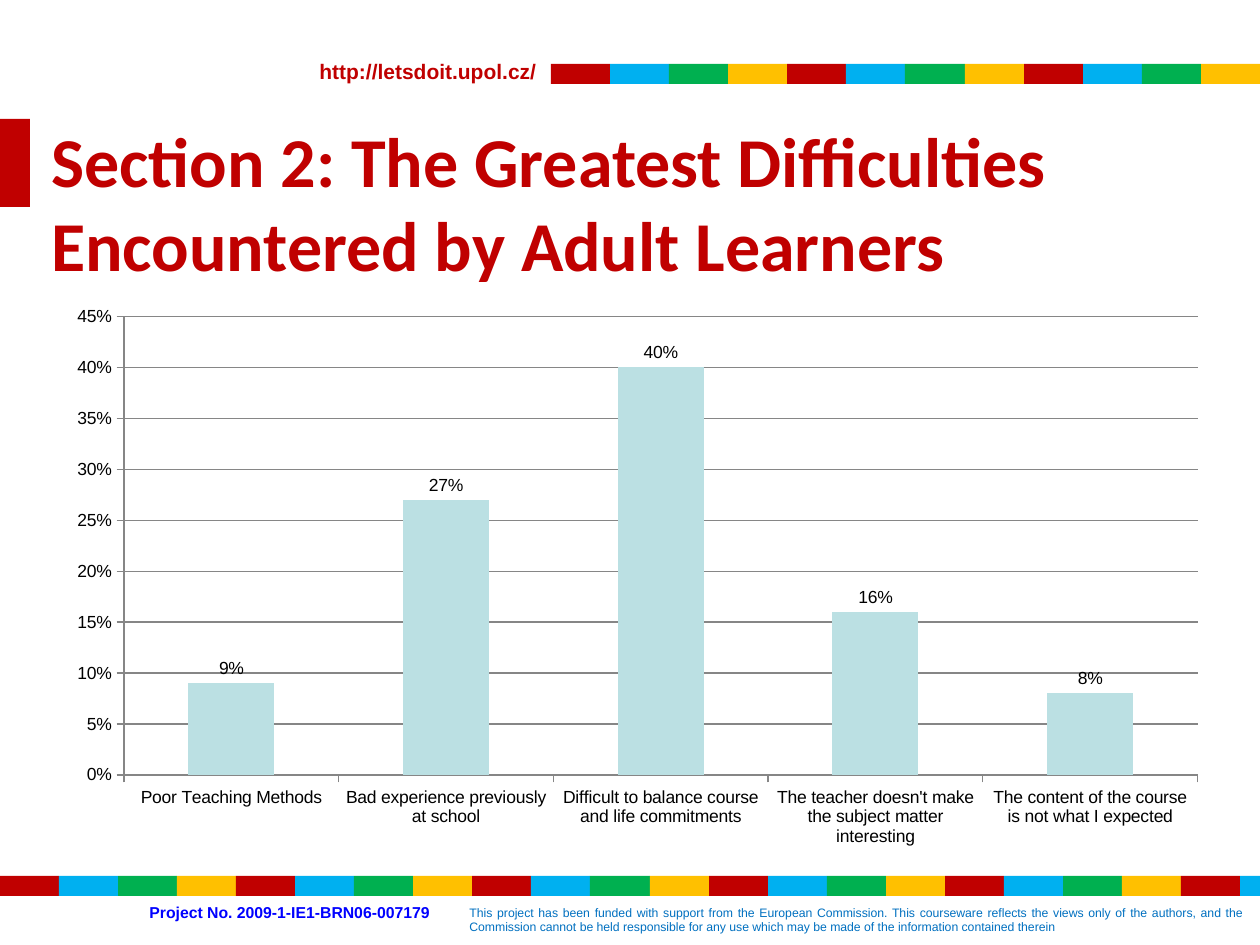
import pptx
import pptx.chart.data
import pptx.dml.color
import pptx.enum.chart
import pptx.enum.shapes
import pptx.enum.text
import pptx.util
from lxml import etree

EMU_PER_PX = 914400 / 126
COLORS = {
    "red": "C00000", "sky": "00B0F0", "green": "00B050", "amber": "FFC000",
    "blue": "0000FF", "note": "0070C0", "bar": "BBE0E3",
    "grid": "868686", "black": "000000",
}
STRIPE = ("red", "sky", "green", "amber")
DIFFICULTIES = {
    "Poor Teaching Methods": 0.09,
    "Bad experience previously at school": 0.27,
    "Difficult to balance course and life commitments": 0.4,
    "The teacher doesn't make the subject matter interesting": 0.16,
    "The content of the course is not what I expected": 0.08,
}
PLOT_AREA = {"x": 0.06, "y": 0.04, "w": 0.92, "h": 0.81}


def px(length):
    return pptx.util.Emu(round(length * EMU_PER_PX))


def rgb(name):
    return pptx.dml.color.RGBColor.from_string(COLORS[name])


def style_font(font, name, size, color, bold=False):
    font.name = name
    font.size = pptx.util.Pt(size)
    font.color.rgb = rgb(color)
    font.bold = bold


def add_text(page, text, bounds, font, size, color, bold=True, wrap=True, top_inset=6, align=None):
    box = page.shapes.add_textbox(*map(px, bounds))
    frame = box.text_frame
    frame.word_wrap = wrap
    frame.margin_top = px(top_inset)
    frame.text = text
    para = frame.paragraphs[0]
    para.alignment = align
    style_font(para.runs[0].font, font, size, color, bold)


def add_block(page, left, top, width, height, color):
    block = page.shapes.add_shape(
        pptx.enum.shapes.MSO_SHAPE.RECTANGLE, px(left), px(top), px(width), px(height))
    block.shadow.inherit = False
    block.fill.solid()
    block.fill.fore_color.rgb = rgb(color)
    block.line.fill.background()


def add_stripe(page, left, top, width, count):
    edges = [left + round(i * width / count) for i in range(count + 1)]
    for i in range(count):
        add_block(page, edges[i], top, edges[i + 1] - edges[i], 20, STRIPE[i % len(STRIPE)])


def place_plot_area(chart):
    plot_area = chart.plots[0]._element.getparent()
    namespace = plot_area.nsmap["c"]
    for old in plot_area.findall(f"{{{namespace}}}layout"):
        plot_area.remove(old)
    layout = etree.Element(f"{{{namespace}}}layout")
    manual = etree.SubElement(layout, f"{{{namespace}}}manualLayout")
    settings = {"layoutTarget": "inner", "xMode": "edge", "yMode": "edge", **PLOT_AREA}
    for tag, value in settings.items():
        etree.SubElement(manual, f"{{{namespace}}}{tag}", val=str(value))
    plot_area.insert(0, layout)


def add_difficulty_chart(page):
    data = pptx.chart.data.CategoryChartData(number_format="0%")
    data.categories = list(DIFFICULTIES)
    data.add_series("Series 1", list(DIFFICULTIES.values()))
    chart = page.shapes.add_chart(
        pptx.enum.chart.XL_CHART_TYPE.COLUMN_CLUSTERED,
        px(54), px(294), px(1167), px(566), data).chart
    chart.has_legend = False
    chart.has_title = False
    style_font(chart.font, "Arial", 10, "black")
    place_plot_area(chart)

    # Axes and gridlines
    values = chart.value_axis
    values.minimum_scale, values.maximum_scale, values.major_unit = 0, 0.45, 0.05
    values.has_major_gridlines = True
    values.tick_labels.number_format = "0%"
    values.tick_labels.number_format_is_linked = False
    for axis in (values, chart.category_axis):
        axis.major_tick_mark = pptx.enum.chart.XL_TICK_MARK.OUTSIDE
    for line in (values.format.line, chart.category_axis.format.line,
                 values.major_gridlines.format.line):
        line.color.rgb = rgb("grid")
        line.width = pptx.util.Pt(0.75)

    # Bars and their labels
    plot = chart.plots[0]
    plot.gap_width = 150
    plot.vary_by_categories = False
    fill = plot.series[0].format.fill
    fill.solid()
    fill.fore_color.rgb = rgb("bar")
    plot.has_data_labels = True
    labels = plot.data_labels
    labels.show_value = True
    labels.number_format = "0%"
    labels.number_format_is_linked = False
    labels.position = pptx.enum.chart.XL_LABEL_POSITION.OUTSIDE_END
    style_font(labels.font, "Arial", 10, "black")


def main():
    deck = pptx.Presentation()
    deck.slide_width, deck.slide_height = px(1260), px(945)
    page = deck.slides.add_slide(deck.slide_layouts[6])

    # Header and footer
    add_text(page, "http://letsdoit.upol.cz/", (307, 53, 246, 38), "Arial", 12, "red", wrap=False)
    add_text(page, "This project has been funded with support from the European Commission. "
             "This courseware reflects the views only of the authors, and the Commission cannot "
             "be held responsible for any use which may be made of the information contained therein",
             (457, 899, 798, 43), "Arial", 7, "note", bold=False,
             align=pptx.enum.text.PP_ALIGN.JUSTIFY)
    add_text(page, "Project No. 2009-1-IE1-BRN06-007179", (137, 897, 335, 32), "Arial", 9, "blue")
    add_stripe(page, 551, 64, 709, 12)
    add_stripe(page, 0, 876, 1299, 22)

    # Title with its side marker
    add_block(page, -29, 119, 59, 88, "red")
    add_text(page, "Section 2: The Greatest Difficulties Encountered by Adult Learners",
             (39, 108, 1158, 129), "Calibri", 40, "red", top_inset=10)

    add_difficulty_chart(page)
    deck.save("out.pptx")


if __name__ == "__main__":
    main()
